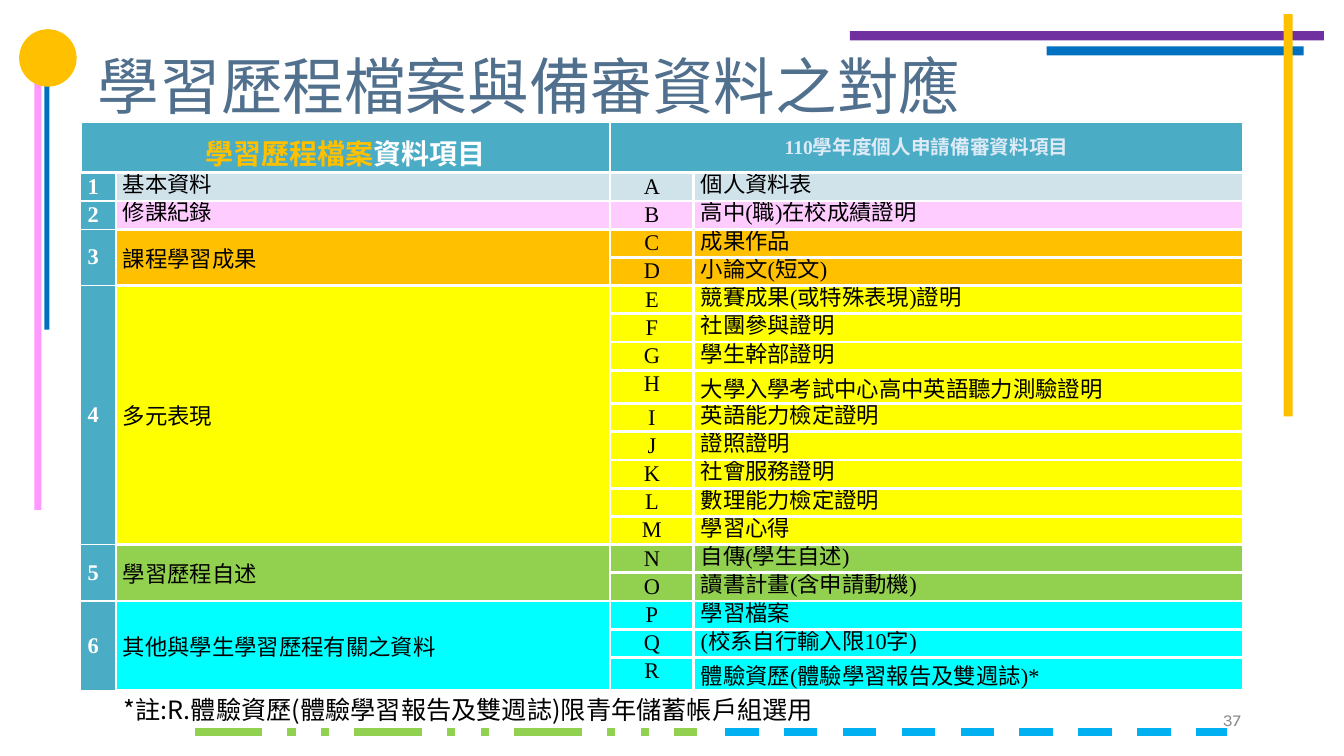
import itertools

import pptx
import pptx.dml.color
import pptx.enum.dml
import pptx.enum.shapes
import pptx.enum.text
import pptx.oxml
import pptx.oxml.ns
import pptx.util
from pptx.util import Inches, Pt

CJK, SERIF = "Noto Sans CJK SC", "Times New Roman"
HEADER_FILL = "4AACC5"
COLUMN_WIDTHS = [0.35, 4.9, 0.83, 5.45]
HEADER_HEIGHT, ROW_HEIGHT, TALL_HEIGHT = 0.5, 0.28, 0.3
TALL_LETTERS = "HR"
LETTERS = "ABCDEFGHIJKLMNOPQR"

# Portfolio category, fill, matching application documents
CATEGORIES = [
    ("基本資料", "D0E2EA", ["個人資料表"]),
    ("修課紀錄", "FFCCFF", ["高中(職)在校成績證明"]),
    ("課程學習成果", "FFC000", ["成果作品", "小論文(短文)"]),
    ("多元表現", "FFFF00", [
        "競賽成果(或特殊表現)證明", "社團參與證明", "學生幹部證明",
        "大學入學考試中心高中英語聽力測驗證明", "英語能力檢定證明",
        "證照證明", "社會服務證明", "數理能力檢定證明", "學習心得"]),
    ("學習歷程自述", "92D050", ["自傳(學生自述)", "讀書計畫(含申請動機)"]),
    ("其他與學生學習歷程有關之資料", "00FFFF", [
        "學習檔案", "(校系自行輸入限10字)", "體驗資歷(體驗學習報告及雙週誌)*"]),
]


def paint(color_format, value):
    color_format.rgb = pptx.dml.color.RGBColor.from_string(value)


def fill_solid(fill, value):
    fill.solid()
    paint(fill.fore_color, value)


def set_typeface(font, typeface):
    """Use one typeface for Latin and East Asian characters."""
    font.name = typeface
    east_asian = pptx.oxml.parse_xml(
        f'<a:ea {pptx.oxml.ns.nsdecls("a")} typeface="{typeface}"/>')
    font._element.find(pptx.oxml.ns.qn("a:latin")).addnext(east_asian)


def write(paragraph, text, size, color, bold=False, typeface=None):
    """Without a typeface, ASCII is set in the serif and the rest in CJK."""
    paragraph.font.size = Pt(size)
    paragraph.font.bold = bold
    paint(paragraph.font.color, color)
    if typeface:
        set_typeface(paragraph.font, typeface)
        paragraph.add_run().text = text
        return
    for is_ascii, letters in itertools.groupby(text, str.isascii):
        run = paragraph.add_run()
        run.text = "".join(letters)
        set_typeface(run.font, SERIF if is_ascii else CJK)


def set_frame(frame, wrap=True):
    frame.word_wrap = wrap
    frame.auto_size = pptx.enum.text.MSO_AUTO_SIZE.NONE
    frame.margin_left = frame.margin_right = frame.margin_bottom = 0
    frame.margin_top = Inches(0.01)


def add_text(slide, box, text, size, color, typeface, wrap=True):
    frame = slide.shapes.add_textbox(*map(Inches, box)).text_frame
    set_frame(frame, wrap)
    write(frame.paragraphs[0], text, size, color, typeface=typeface)


def add_block(slide, kind, box, color):
    block = slide.shapes.add_shape(kind, *map(Inches, box))
    block.shadow.inherit = False
    fill_solid(block.fill, color)
    block.line.fill.background()


def add_dashes(slide, left, right, color, dash):
    top = Inches(7.26)
    line = slide.shapes.add_connector(
        pptx.enum.shapes.MSO_CONNECTOR.STRAIGHT, Inches(left), top, Inches(right), top)
    paint(line.line.color, color)
    line.line.width = Pt(6)
    line.line.dash_style = dash
    line._element.spPr.append(
        pptx.oxml.parse_xml(f'<a:effectLst {pptx.oxml.ns.nsdecls("a")}/>'))


def add_decoration(slide):
    bar = pptx.enum.shapes.MSO_SHAPE.RECTANGLE
    for box, color in [
        ((8.43, 0.31, 4.7, 0.09), "7030A0"),
        ((10.38, 0.46, 2.55, 0.09), "0070C0"),
        ((12.73, 0.14, 0.09, 3.99), "FFC000"),
        ((0.34, 0.36, 0.07, 4.7), "FF99FF"),
        ((0.44, 0.72, 0.05, 2.55), "0070C0"),
    ]:
        add_block(slide, bar, box, color)
    add_block(slide, pptx.enum.shapes.MSO_SHAPE.OVAL, (0.19, 0.29, 0.57, 0.57), "FFC000")
    dash = pptx.enum.dml.MSO_LINE
    add_dashes(slide, 7.19, 12.17, "00B0F0", dash.DASH)
    add_dashes(slide, 1.93, 6.91, "92D050", dash.DASH_DOT_DOT)


def format_cell(cell, fill, thin=False):
    """White borders, thin ones round the number column, and a plain fill."""
    properties = cell._tc.get_or_add_tcPr()
    for side in "LRTB":
        width = Pt(1) if thin and side != "R" else Pt(2.25)
        properties.append(pptx.oxml.parse_xml(
            f'<a:ln{side} {pptx.oxml.ns.nsdecls("a")} w="{int(width)}"><a:solidFill>'
            f'<a:srgbClr val="FFFFFF"/></a:solidFill></a:ln{side}>'))
    fill_solid(cell.fill, fill)
    cell.margin_left = cell.margin_right = cell.margin_top = cell.margin_bottom = 0


def write_cell(cell, text, color="000000", bold=False, centred=False, fixed=True):
    paragraph = cell.text_frame.paragraphs[0]
    write(paragraph, text, 16, color, bold)
    if centred:
        paragraph.alignment = pptx.enum.text.PP_ALIGN.CENTER
    else:
        cell.margin_left = Inches(0.07)
    if cell.is_merge_origin:
        cell.vertical_anchor = pptx.enum.text.MSO_ANCHOR.MIDDLE
    elif fixed:
        paragraph.line_spacing = Pt(18.9)
    else:
        cell.margin_top = Inches(0.01)


def add_header(table):
    for column in range(4):
        format_cell(table.cell(0, column), HEADER_FILL)
    portfolio, application = table.cell(0, 0), table.cell(0, 2)
    portfolio.merge(table.cell(0, 1))
    application.merge(table.cell(0, 3))
    for cell in (portfolio, application):
        cell.margin_top = Inches(0.1)
        cell.text_frame.paragraphs[0].alignment = pptx.enum.text.PP_ALIGN.CENTER
    heading = portfolio.text_frame.paragraphs[0]
    write(heading, "學習歷程檔案", 20, "FFFFFF", True)
    paint(heading.runs[0].font.color, "FFC000")
    write(heading, "資料項目", 20, "FFFFFF", True)
    write(application.text_frame.paragraphs[0],
          "110學年度個人申請備審資料項目", 14, "DEEBF7", True)


def add_mapping_table(slide):
    table = slide.shapes.add_table(
        len(LETTERS) + 1, 4, Inches(0.8), Inches(1.21), Inches(11.53), Inches(5.58)).table
    table.first_row = table.horz_banding = False
    for column, width in zip(table.columns, COLUMN_WIDTHS):
        column.width = Inches(width)
    table.rows[0].height = Inches(HEADER_HEIGHT)
    add_header(table)

    row = 1
    for number, (category, fill, documents) in enumerate(CATEGORIES, 1):
        first, last = row, row + len(documents) - 1
        for document in documents:
            letter = LETTERS[row - 1]
            tall = letter in TALL_LETTERS
            table.rows[row].height = Inches(TALL_HEIGHT if tall else ROW_HEIGHT)
            for column in range(4):
                format_cell(table.cell(row, column),
                            fill if column else HEADER_FILL, thin=column == 0)
            write_cell(table.cell(row, 2), letter, centred=True, fixed=not tall)
            write_cell(table.cell(row, 3), document, fixed=not tall)
            row += 1
        if last > first:
            for column in range(2):
                table.cell(first, column).merge(table.cell(last, column))
        write_cell(table.cell(first, 0), str(number), "FFFFFF", bold=True)
        write_cell(table.cell(first, 1), category)


def add_title(slide):
    title = slide.shapes.title
    title.left, title.top, title.width, title.height = map(Inches, (0.97, 0.46, 10.13, 0.75))
    set_frame(title.text_frame)
    title.text_frame.vertical_anchor = pptx.enum.text.MSO_ANCHOR.MIDDLE
    heading = title.text_frame.paragraphs[0]
    heading.alignment = pptx.enum.text.PP_ALIGN.LEFT
    write(heading, "學習歷程檔案與備審資料之對應", 44, "51708D", typeface="Calibri")


def main():
    deck = pptx.Presentation()
    deck.slide_width, deck.slide_height = Inches(13.33), Inches(7.5)
    slide = deck.slides.add_slide(deck.slide_layouts[5])
    add_decoration(slide)
    add_title(slide)
    add_mapping_table(slide)
    # Footnote and page number
    add_text(slide, (1.23, 6.88, 9.27, 0.32),
             "*註:R.體驗資歷(體驗學習報告及雙週誌)限青年儲蓄帳戶組選用", 18, "000000", CJK)
    add_text(slide, (12.13, 7.03, 0.2, 0.23), "37", 12, "888888", "Karla", wrap=False)
    deck.save("out.pptx")


if __name__ == "__main__":
    main()
